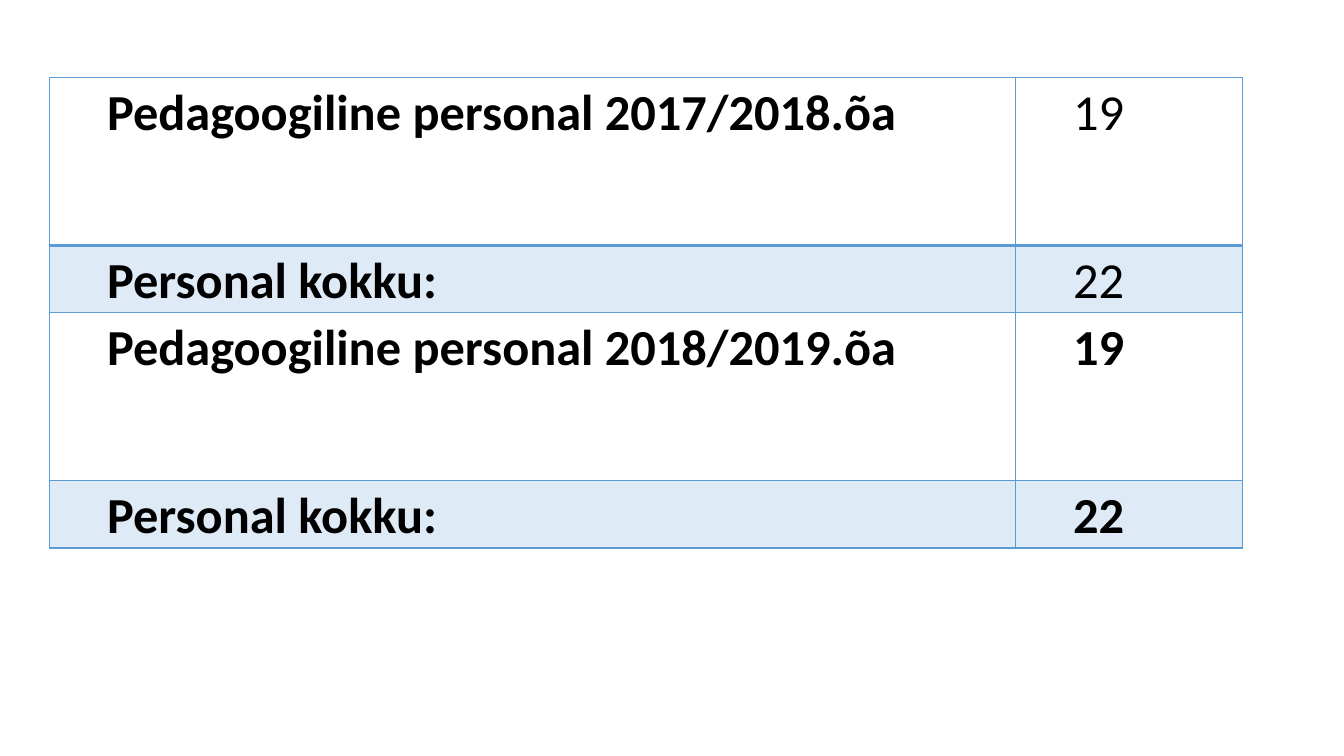
from lxml import etree
from pptx import Presentation, util as u
from pptx.dml import color
from pptx.oxml import ns

BLUE, PALE_BLUE, WHITE, BLACK = "5B9BD5", "DEEBF7", "FFFFFF", "000000"


def rgb(value):
    return color.RGBColor.from_string(value)


class StaffSlide:
    """Draws styled elements on one slide, measured on a grid of 160 columns by 90 rows."""

    font_name = "Calibri"
    font_size = 36

    def __init__(self, presentation):
        self.column = presentation.slide_width / 160
        self.row = presentation.slide_height / 90
        self.slide = presentation.slides.add_slide(presentation.slide_layouts[6])

    def columns(self, count):
        return u.Emu(round(count * self.column))

    def rows(self, count):
        return u.Emu(round(count * self.row))

    def table(self, left, top, widths, heights, records):
        table = self.slide.shapes.add_table(
            len(heights), len(widths), self.columns(left), self.rows(top),
            self.columns(sum(widths)), self.rows(sum(heights))).table
        table.first_row = table.horz_banding = False
        for column, width in zip(table.columns, widths):
            column.width = self.columns(width)
        for index, (height, (label, count, bold_count)) in enumerate(zip(heights, records)):
            table.rows[index].height = self.rows(height)
            fill = PALE_BLUE if index % 2 else WHITE
            borders = {"L": 1, "R": 1, "T": 2 if index == 1 else 1, "B": 2 if index == 0 else 1}
            for position, (words, bold) in enumerate([(label, True), (count, bold_count)]):
                self.cell(table.cell(index, position), words, bold, fill, borders)

    def cell(self, cell, words, bold, fill, borders):
        cell.margin_left = cell.margin_right = u.Inches(0.07)
        cell.margin_top = cell.margin_bottom = 0
        cell.fill.solid()
        cell.fill.fore_color.rgb = rgb(fill)
        cell.text = words
        paragraph = cell.text_frame.paragraphs[0]
        paragraph.line_spacing = 1.07
        paragraph._p.get_or_add_pPr().set("marL", str(u.Inches(0.5)))
        font = paragraph.font
        font.name, font.size, font.bold = self.font_name, u.Pt(self.font_size), bold
        font.color.rgb = rgb(BLACK)
        self.borders(cell, borders)

    def borders(self, cell, widths):
        properties = cell._tc.get_or_add_tcPr()
        for index, (side, width) in enumerate(widths.items()):
            line = etree.Element(ns.qn(f"a:ln{side}"), w=str(u.Pt(width)))
            solid = etree.SubElement(line, ns.qn("a:solidFill"))
            etree.SubElement(solid, ns.qn("a:srgbClr"), val=BLUE)
            properties.insert(index, line)


def main():
    presentation = Presentation()
    presentation.slide_width, presentation.slide_height = u.Inches(13.33), u.Inches(7.5)
    StaffSlide(presentation).table(
        left=5.9, top=9.25, widths=[115, 27], heights=[20, 8, 20, 8],
        records=[
            ("Pedagoogiline personal 2017/2018.õa", "19", False),
            ("Personal kokku:", "22", False),
            ("Pedagoogiline personal 2018/2019.õa", "19", True),
            ("Personal kokku:", "22", True),
        ])
    presentation.save("out.pptx")


if __name__ == "__main__":
    main()
